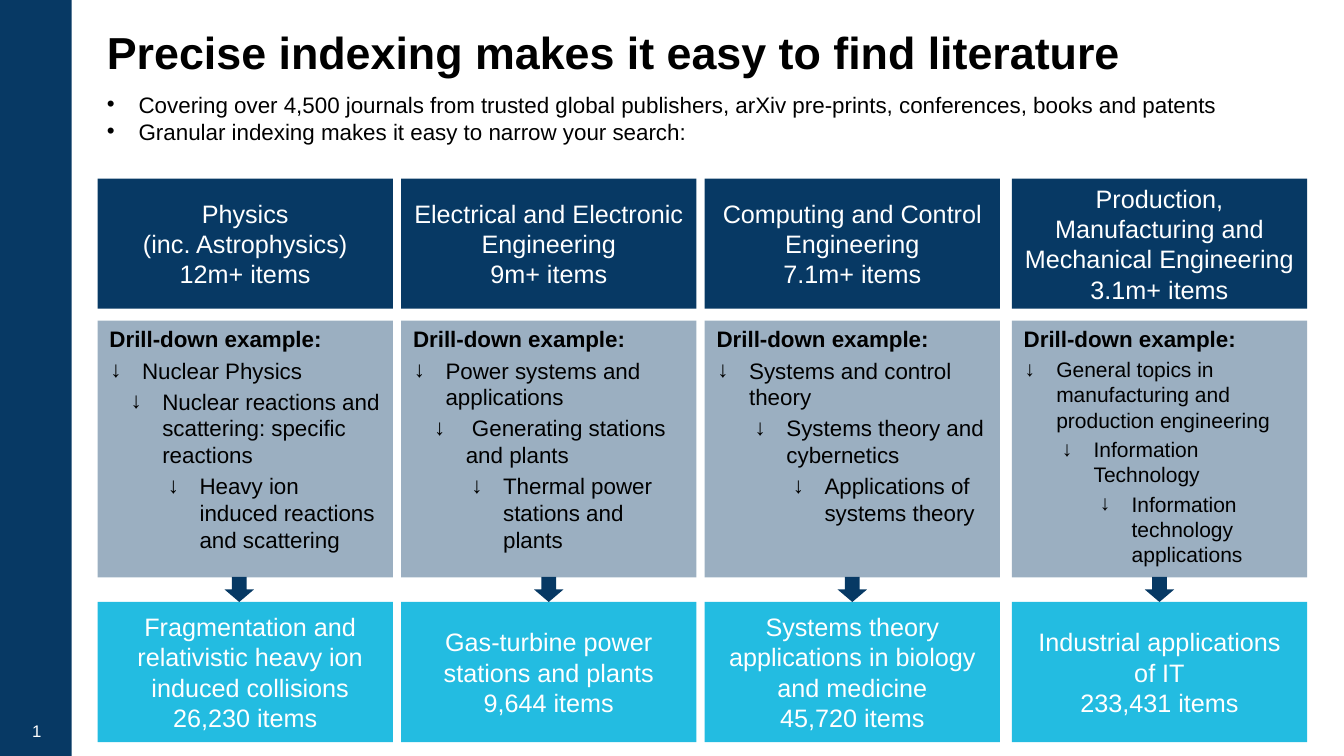
from lxml.etree import SubElement
from pptx import Presentation
from pptx.dml.color import RGBColor
from pptx.enum.shapes import MSO_SHAPE
from pptx.enum.text import MSO_ANCHOR, MSO_AUTO_SIZE, PP_ALIGN
from pptx.oxml.ns import qn
from pptx.util import Cm, Pt

HUES = {"navy": "073964", "sky": "23BCE1", "white": "FFFFFF", "black": "000000"}
FONT = "Arial"
HANG = 0.8
TITLE = "Precise indexing makes it easy to find literature"
POINTS = [
    "Covering over 4,500 journals from trusted global publishers, arXiv pre-prints, conferences, books and patents",
    "Granular indexing makes it easy to narrow your search:",
]
FIELDS = [
    {"left": 2.46, "arrow": 3.2, "size": 16, "steps": [0.87, 1.38, 2.32], "shift": 0.25,
     "head": ["Physics\n(inc. Astrophysics)", "12m+ items"],
     "drill": ["Nuclear Physics", "Nuclear reactions and scattering: specific reactions",
               "Heavy ion induced reactions and scattering"],
     "found": ["Fragmentation and relativistic heavy ion induced collisions", "26,230 items"]},
    {"left": 10.11, "arrow": 3.35, "size": 16, "steps": [0.87, 1.38, 2.32], "shift": 0,
     "head": ["Electrical and Electronic Engineering", "9m+ items"],
     "drill": ["Power systems and applications", " Generating stations and plants",
               "Thermal power stations and plants"],
     "found": ["Gas-turbine power stations and plants", "9,644 items"]},
    {"left": 17.76, "arrow": 3.35, "size": 16, "steps": [0.87, 1.81, 2.77], "shift": 0,
     "head": ["Computing and Control", "Engineering", "7.1m+ items"],
     "drill": ["Systems and control theory", "Systems theory and cybernetics",
               "Applications of systems theory"],
     "found": ["Systems theory applications in biology and medicine", "45,720 items"]},
    {"left": 25.5, "arrow": 3.35, "size": 15, "steps": [0.87, 1.81, 2.77], "shift": 0,
     "head": ["Production, Manufacturing and Mechanical Engineering", "3.1m+ items"],
     "drill": ["General topics in manufacturing and production engineering",
               "Information Technology", "Information technology applications"],
     "found": ["Industrial applications\nof IT", "233,431 items"]},
]


def color(hue):
    """Return the named colour."""
    return RGBColor.from_string(HUES[hue])


def place(item, left, top, width, height):
    """Move an item to a box given in centimetres."""
    item.left, item.top = Cm(left), Cm(top)
    item.width, item.height = Cm(width), Cm(height)


def style(font, size, hue, bold=False):
    """Set the look of a font."""
    font.name, font.size, font.bold = FONT, Pt(size), bold
    font.color.rgb = color(hue)


def write(frame, first, text, size, hue, bold=False, align=PP_ALIGN.LEFT,
          mark=None, left=0, gap=0):
    """Write one paragraph, with a hanging bullet if a mark is given."""
    para = frame.paragraphs[0] if first else frame.add_paragraph()
    props = para._p.get_or_add_pPr()
    props.set("marL", str(Cm(left)))
    props.set("indent", str(-Cm(HANG) if mark else 0))
    if mark:
        tint = SubElement(props, qn("a:buClr"))
        SubElement(tint, qn("a:srgbClr"), val=HUES[hue])
        SubElement(props, qn("a:buFont"), typeface=FONT)
        SubElement(props, qn("a:buChar"), char=mark)
    para.alignment = align
    para.space_before = Pt(0 if first else gap)
    for index, line in enumerate(text.split("\n")):
        if index:
            para.add_line_break()
        run = para.add_run()
        run.text = line
        style(run.font, size, hue, bold)


def block(slide, kind, hue, left, top, width, height, alpha=None):
    """Add a plain filled shape and return it."""
    shape = slide.shapes.add_shape(kind, Cm(left), Cm(top), Cm(width), Cm(height))
    shape.shadow.inherit = False
    shape.fill.solid()
    shape.fill.fore_color.rgb = color(hue)
    shape.line.fill.background()
    if alpha:
        tint = shape._element.spPr.find(qn("a:solidFill"))[0]
        SubElement(tint, qn("a:alpha"), val=str(alpha * 1000))
    shape.text_frame.word_wrap = True
    return shape


def label(slide, lines, hue, left, top, width, height, shift=0):
    """Add a box with centred white lines."""
    box = block(slide, MSO_SHAPE.RECTANGLE, hue, left, top, width, height)
    box.text_frame.vertical_anchor = MSO_ANCHOR.MIDDLE
    for index, line in enumerate(lines):
        write(box.text_frame, index == 0, line, 18, "white", align=PP_ALIGN.CENTER,
              left=0 if index else shift)


def side(slide, left, top, width, height):
    """Draw the side bar with the slide number."""
    block(slide, MSO_SHAPE.RECTANGLE, "navy", left, top, width, height)
    box = slide.shapes.add_textbox(Cm(left + 0.33), Cm(top + height - 1.14), Cm(1.2), Cm(1.02))
    box.text_frame.vertical_anchor = MSO_ANCHOR.MIDDLE
    box.text_frame.word_wrap = True
    para = box.text_frame.paragraphs[0]
    para.alignment = PP_ALIGN.CENTER
    style(para.font, 12, "white")
    field = SubElement(para._p, qn("a:fld"), type="slidenum",
                       id="{B6F15528-21DE-4FAA-801E-634DDDAF4B2B}")
    look = SubElement(field, qn("a:rPr"), lang="en-GB", sz="1200")
    fill = SubElement(look, qn("a:solidFill"))
    SubElement(fill, qn("a:srgbClr"), val=HUES["white"])
    SubElement(look, qn("a:latin"), typeface=FONT)
    SubElement(field, qn("a:t")).text = "2"


def intro(slide, left, top, width):
    """Fill the title and the opening list."""
    title, body = slide.shapes.title, slide.placeholders[1]
    place(title, left, top, width, 2.59)
    place(body, left, top + 2.16, width + 0.43, 1.63)
    for holder in (title, body):
        holder.text_frame.auto_size = MSO_AUTO_SIZE.NONE
        holder.text_frame.word_wrap = True
    title.text_frame.vertical_anchor = MSO_ANCHOR.MIDDLE
    write(title.text_frame, True, TITLE, 32, "black", True)
    for index, point in enumerate(POINTS):
        write(body.text_frame, index == 0, point, 16, "black", mark="•", left=HANG)


def column(slide, data, top, width):
    """Draw one subject from heading to search result."""
    left = data["left"]
    label(slide, data["head"], "navy", left, top, width, 3.28)
    box = block(slide, MSO_SHAPE.RECTANGLE, "navy", left, top + 3.58, width, 6.47, 40)
    frame = box.text_frame
    frame.vertical_anchor = MSO_ANCHOR.TOP
    write(frame, True, "Drill-down example:", 16, "black", True, left=0.05)
    for step, text in zip(data["steps"], data["drill"]):
        write(frame, False, text, data["size"], "black", mark="↓", left=step, gap=3)
    label(slide, data["found"], "sky", left, top + 10.67, width, 3.53, data["shift"])
    block(slide, MSO_SHAPE.DOWN_ARROW, "navy", left + data["arrow"], top + 10.04, 0.74, 0.63)


def main():
    """Build and save the slide."""
    deck = Presentation()
    deck.slide_width, deck.slide_height = Cm(33.87), Cm(19.05)
    slide = deck.slides.add_slide(deck.slide_layouts[1])
    side(slide, 0, 0, 1.81, 19.05)
    intro(slide, 2.44, 0, 29.34)
    for data in FIELDS:
        column(slide, data, 4.5, 7.44)
    deck.save("out.pptx")


if __name__ == "__main__":
    main()
